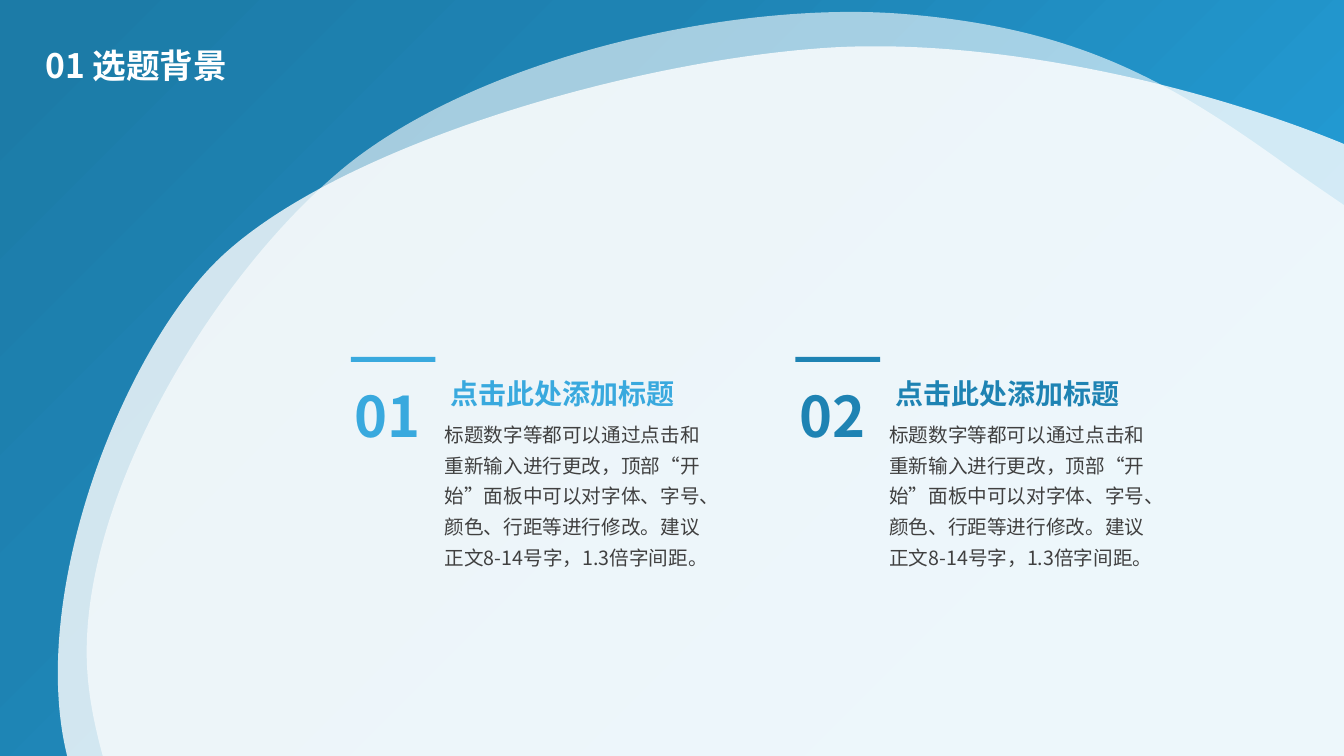
"""Build the section slide with two numbered text blocks on layered white curves."""
from copy import deepcopy
from math import cos, radians, sin

from lxml import etree
from pptx import Presentation
from pptx.dml.color import RGBColor
from pptx.enum.shapes import MSO_SHAPE
from pptx.enum.text import MSO_ANCHOR, MSO_AUTO_SIZE, PP_ALIGN
from pptx.oxml.ns import qn
from pptx.util import Inches, Pt

RECT = MSO_SHAPE.RECTANGLE
MIDDLE = MSO_ANCHOR.MIDDLE
GROW, FIXED = MSO_AUTO_SIZE.SHAPE_TO_FIT_TEXT, MSO_AUTO_SIZE.NONE
LEFT = PP_ALIGN.LEFT

FONT = "Noto Sans CJK SC"
COLORS = {"white": "FFFFFF", "text": "404040", "light": "39A9DE", "dark": "1E83B3",
          "sky": "239CD5", "deep": "1C7BA7"}
TITLE = "01 选题背景"
HEADING = "点击此处添加标题"
BODY = ("标题数字等都可以通过点击和重新输入进行更改，顶部“开始”面板中可以对字体、字号、"
        "颜色、行距等进行修改。建议正文8-14号字，1.3倍字间距。")
BLOCKS = [("01", "light"), ("02", "dark")]
GRADIENT = [(0, "sky"), (0.23, "sky"), (0.69, "dark"), (0.97, "deep")]

CURVES = [
    {"opacity": 60, "frame": (1.7, -0.55, 14.18, 15.41), "angle": 315, "beziers": [
        [(11.55, 0.77), (10.65, 0.28), (8.98, 0.14)],
        [(7.31, 0), (4.8, 0.55), (3.44, 1.64)],
        [(2.09, 2.74), (0.73, 5.04), (0.87, 6.71)],
        [(1, 8.38), (2.89, 12.02), (4.86, 12.92)],
        [(6.83, 13.81), (12.43, 13.78), (14.29, 12.49)],
        [(16.15, 11.21), (16.14, 6.87), (16.01, 5.2)],
        [(15.87, 3.53), (13.89, 2.46), (12.72, 1.61)]]},
    {"opacity": 80, "frame": (0.56, 0.42, 16.6, 11.74), "angle": 352.9, "beziers": [
        [(16.12, 3.42), (15.7, 2.72), (14.32, 1.91)],
        [(12.94, 1.1), (10.29, 0.36), (8.27, 0.47)],
        [(6.24, 0.59), (3.29, 1.47), (2.15, 2.59)],
        [(1.02, 3.71), (-0.06, 6.84), (1.02, 8.27)],
        [(2.09, 9.69), (7.09, 12.09), (9.71, 12.07)],
        [(12.33, 12.06), (15.6, 9.29), (16.74, 8.17)],
        [(17.88, 7.05), (16.93, 5.51), (16.53, 4.46)]]},
]
BLOCK_LEFT, BLOCK_TOP, BLOCK_PITCH = 3.48, 3.54, 4.41


def rgb(name):
    return RGBColor.from_string(COLORS[name])


def plain(sp, color):
    sp.fill.solid()
    sp.fill.fore_color.rgb = rgb(color)
    sp.line.fill.background()
    sp.shadow.inherit = False


def place(sp, box):
    sp.left, sp.top, sp.width, sp.height = map(Inches, box)


def write(tf, text, size, color, bold=False, spacing=1.3):
    p = tf.paragraphs[0]
    p.text = text
    p.alignment = LEFT
    p.line_spacing = spacing
    p.space_before = Pt(0)
    p.font.size = Pt(size)
    p.font.bold = bold
    p.font.color.rgb = rgb(color)
    p.font.name = FONT
    props = p._p.pPr.find(qn("a:defRPr"))
    etree.SubElement(props, qn("a:ea")).set("typeface", FONT)


def add_text(s, box, text, size, color, bold=False, wrap=False):
    tf = s.shapes.add_textbox(*map(Inches, box)).text_frame
    tf.word_wrap = wrap
    tf.auto_size = GROW
    write(tf, text, size, color, bold)


def add_backdrop(s, width, height):
    sp = s.shapes.add_shape(RECT, 0, 0, width, height)
    sp.line.fill.background()
    sp.shadow.inherit = False
    sp.fill.gradient()
    sp.fill.gradient_angle = 135
    stops = sp._element.spPr.find(".//" + qn("a:gsLst"))
    for _ in range(len(GRADIENT) - len(stops)):
        stops.append(deepcopy(stops[0]))
    for stop, (position, color) in zip(sp.fill.gradient_stops, GRADIENT):
        stop.position = position
        stop.color.rgb = rgb(color)


def to_frame(point, frame, angle):
    left, top, width, height = frame
    dx, dy = point[0] - left - width / 2, point[1] - top - height / 2
    c, n = cos(radians(angle)), sin(radians(angle))
    return Inches(width / 2 + dx * c + dy * n), Inches(height / 2 - dx * n + dy * c)


def add_curve(s, opacity, frame, angle, beziers):
    local = [[to_frame(pt, frame, angle) for pt in bezier] for bezier in beziers]
    ends = [bezier[-1] for bezier in local]
    builder = s.shapes.build_freeform(*ends[-1])
    builder.add_line_segments(ends, close=True)
    sp = builder.convert_to_shape()
    place(sp, frame)
    sp.rotation = angle
    plain(sp, "white")
    color = sp._element.spPr.find(".//" + qn("a:srgbClr"))
    etree.SubElement(color, qn("a:alpha")).set("val", str(opacity * 1000))

    outline = sp._element.spPr.find(".//" + qn("a:path"))
    outline.set("w", str(sp.width))
    outline.set("h", str(sp.height))
    start = outline.find(qn("a:moveTo"))[0]
    start.set("x", str(ends[-1][0]))
    start.set("y", str(ends[-1][1]))
    for line, bezier in zip(outline.findall(qn("a:lnTo")), local):
        cubic = etree.Element(qn("a:cubicBezTo"))
        for x, y in bezier:
            etree.SubElement(cubic, qn("a:pt"), x=str(x), y=str(y))
        outline.replace(line, cubic)


def add_title(s):
    title = s.shapes.title
    title._element.getparent().append(title._element)
    place(title, (0.35, 0.28, 5.8, 0.79))
    tf = title.text_frame
    tf.vertical_anchor = MIDDLE
    tf.auto_size = FIXED
    write(tf, TITLE, 24, "white", bold=True, spacing=0.9)


def add_block(s, x, number, color):
    y = BLOCK_TOP
    bar = s.shapes.add_shape(RECT, *map(Inches, (x, y, 0.84, 0.05)))
    plain(bar, color)
    add_text(s, (x + 0.83, y + 0.54, 2.75, 1.63), BODY, 14, "text", wrap=True)
    add_text(s, (x + 0.89, y + 0.05, 2.45, 0.54), HEADING, 20, color, bold=True)
    add_text(s, (x - 0.06, y, 0.89, 0.98), number, 40, color, bold=True)


def main():
    prs = Presentation()
    prs.slide_width, prs.slide_height = Inches(13.33), Inches(7.5)
    s = prs.slides.add_slide(prs.slide_layouts[5])
    add_backdrop(s, prs.slide_width, prs.slide_height)
    for curve in CURVES:
        add_curve(s, **curve)
    add_title(s)
    for i, (number, color) in enumerate(BLOCKS):
        add_block(s, BLOCK_LEFT + i * BLOCK_PITCH, number, color)
    prs.save("out.pptx")


if __name__ == "__main__":
    main()
